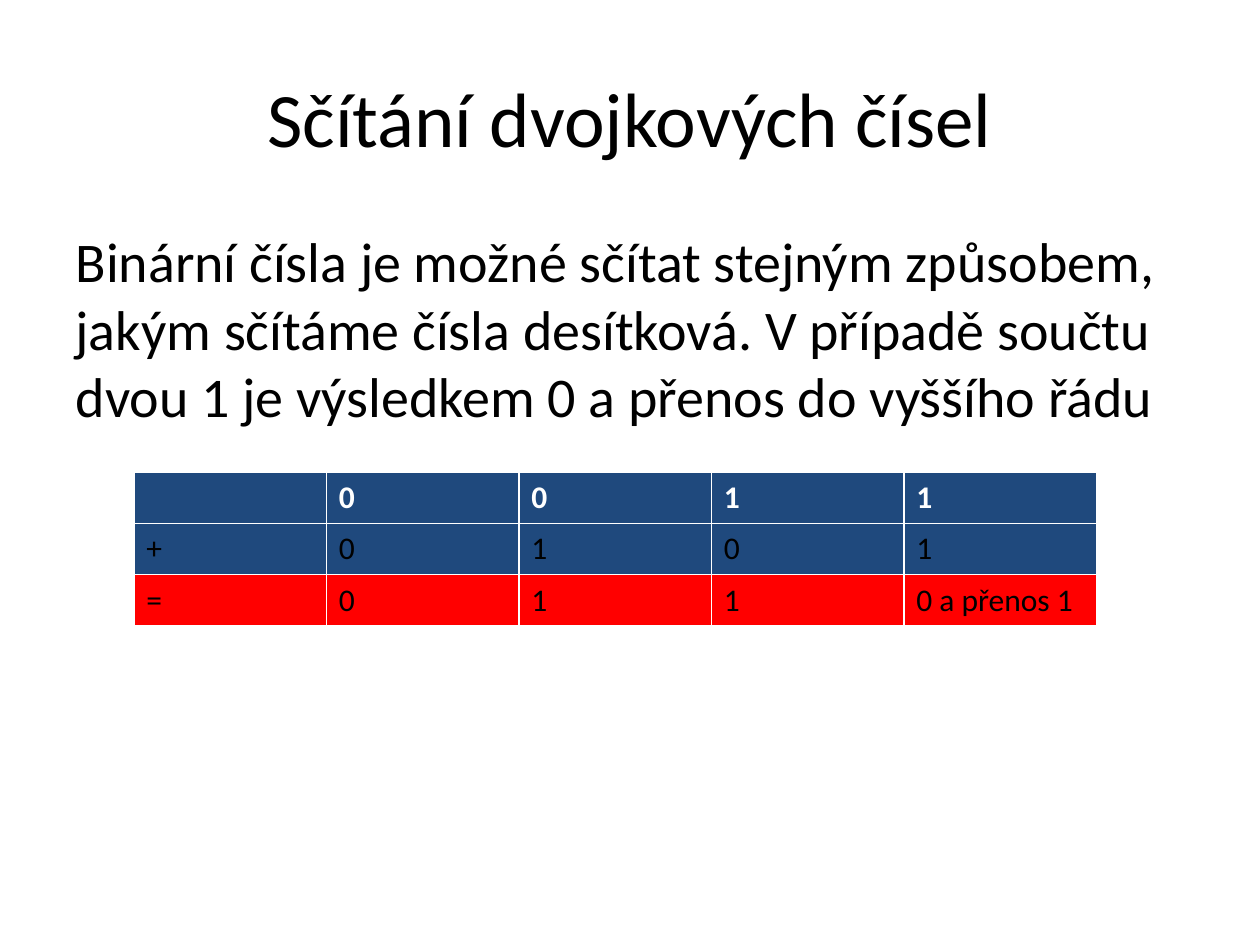
from lxml.etree import SubElement
from pptx import Presentation
from pptx.dml.color import RGBColor
from pptx.enum.text import MSO_ANCHOR, PP_ALIGN
from pptx.oxml.ns import qn
from pptx.util import Pt

"""Build a slide explaining the addition of binary numbers."""

COLOURS = {"text": "000000", "light": "FFFFFF", "navy": "1F497D", "red": "FF0000"}
ROWS = [
    (["", "0", "0", "1", "1"], "navy", "light", True),
    (["+", "0", "1", "0", "1"], "navy", "text", False),
    (["=", "0", "1", "1", "0 a přenos 1"], "red", "text", False),
]


def colour(name):
    return RGBColor.from_string(COLOURS[name])


def set_attributes(item, values):
    for name, value in values.items():
        setattr(item, name, value)


def write_text(frame, text, ink, size, bold=False):
    para = frame.paragraphs[0]
    span = para.add_run()
    span.text = text
    set_attributes(span.font, {"name": "Calibri", "size": Pt(size), "bold": bold})
    span.font.color.rgb = colour(ink)
    return para


def fill_placeholder(box, text, size, place, anchor, alignment):
    sides = ("left", "top", "width", "height")
    set_attributes(box, {side: Pt(length) for side, length in zip(sides, place)})
    set_attributes(box.text_frame, {"word_wrap": True, "vertical_anchor": anchor})
    para = write_text(box.text_frame, text, "text", size)
    para.alignment = alignment
    return para


def remove_bullet(para):
    properties = para._p.get_or_add_pPr()
    for name in ("marL", "indent"):
        properties.set(name, "0")
    SubElement(properties, qn("a:buNone"))


def add_sum_table(page, left, top, column_width, row_height):
    columns = len(ROWS[0][0])
    table = page.shapes.add_table(
        len(ROWS), columns, Pt(left), Pt(top),
        Pt(column_width * columns), Pt(row_height * len(ROWS)),
    ).table
    for column in table.columns:
        column.width = Pt(column_width)
    for row, (texts, fill, ink, bold) in zip(table.rows, ROWS):
        row.height = Pt(row_height)
        for cell, text in zip(row.cells, texts):
            cell.fill.solid()
            cell.fill.fore_color.rgb = colour(fill)
            if text:
                write_text(cell.text_frame, text, ink, 18, bold)


def main():
    deck = Presentation()
    set_attributes(deck, {"slide_width": Pt(720), "slide_height": Pt(540)})
    page = deck.slides.add_slide(deck.slide_layouts[1])
    title, body = page.placeholders
    fill_placeholder(title, "Sčítání dvojkových čísel", 44,
                     (36, 21.6, 648, 90), MSO_ANCHOR.MIDDLE, PP_ALIGN.CENTER)
    para = fill_placeholder(
        body,
        "Binární čísla je možné sčítat stejným způsobem, jakým sčítáme čísla "
        "desítková. V případě součtu dvou 1 je výsledkem 0 a přenos do vyššího řádu",
        32, (36, 126, 648, 356.4), MSO_ANCHOR.TOP, PP_ALIGN.LEFT)
    remove_bullet(para)
    add_sum_table(page, 76.5, 270, 110, 29.2)
    deck.save("out.pptx")


if __name__ == "__main__":
    main()
